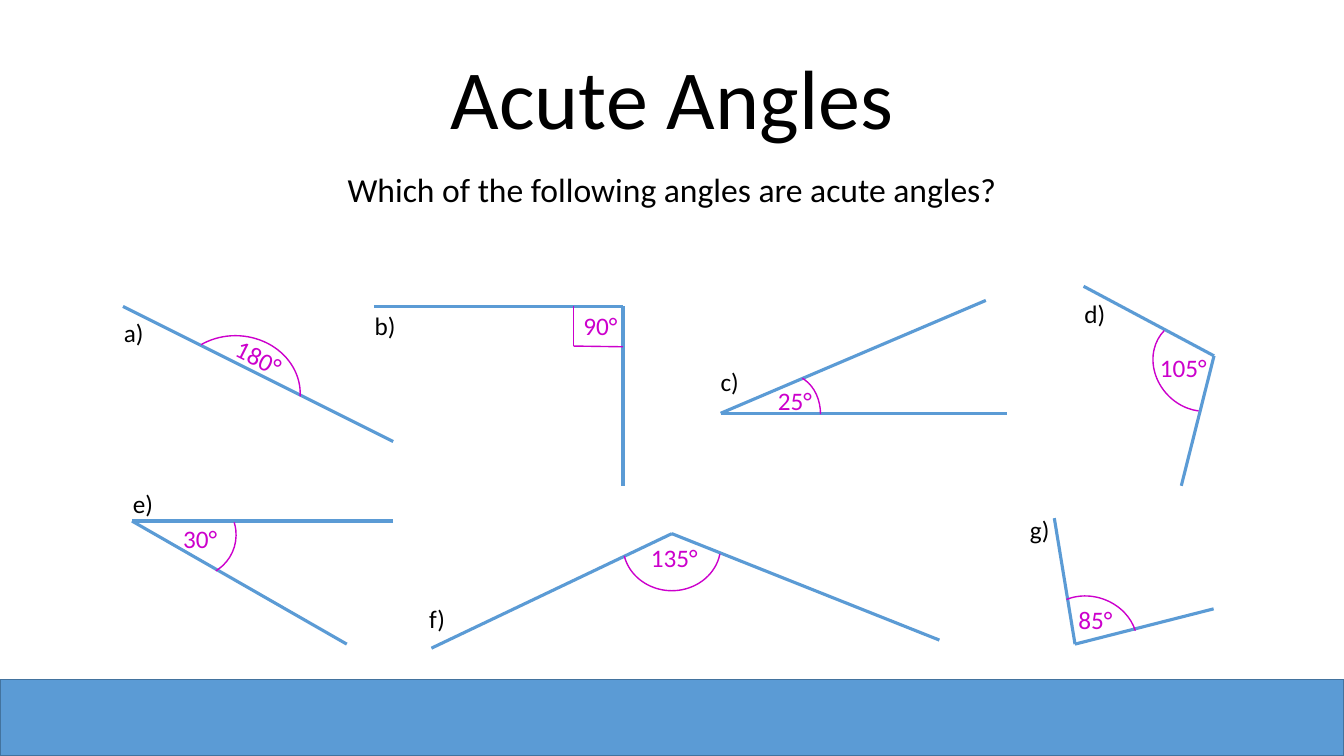
from dataclasses import dataclass

from lxml.etree import SubElement
from pptx import Presentation
from pptx.dml.color import RGBColor
from pptx.enum.shapes import MSO_CONNECTOR, MSO_SHAPE
from pptx.enum.text import MSO_ANCHOR, MSO_AUTO_SIZE, PP_ALIGN
from pptx.oxml.ns import qn
from pptx.util import Pt

BLACK, BLUE, DARK_BLUE, MAGENTA = "000000", "5B9BD5", "43739E", "CC00CC"


def colour(hex_string):
    return RGBColor.from_string(hex_string)


@dataclass
class AngleSlide:
    slide: object
    font: str = "Calibri"
    label_size: float = 18
    arm_width: float = 2.25
    mark_width: float = 1

    def set_text(self, frame, text, size, hex_string):
        frame.text = text
        frame.word_wrap = True
        paragraph = frame.paragraphs[0]
        for run in paragraph.runs:
            run.font.name = self.font
            run.font.size = Pt(size)
            run.font.color.rgb = colour(hex_string)
        return paragraph

    def heading(self, placeholder, text, box, size, anchor, space_before):
        placeholder.left, placeholder.top, placeholder.width, placeholder.height = map(Pt, box)
        frame = placeholder.text_frame
        paragraph = self.set_text(frame, text, size, BLACK)
        frame.auto_size = MSO_AUTO_SIZE.NONE
        frame.vertical_anchor = anchor
        paragraph.alignment = PP_ALIGN.CENTER
        paragraph.line_spacing = 0.9
        paragraph.space_before = Pt(space_before)
        properties = paragraph._p.get_or_add_pPr()
        properties.set("marL", "0")
        properties.set("indent", "0")
        SubElement(properties, qn("a:buNone"))

    def band(self, box):
        band = self.slide.shapes.add_shape(MSO_SHAPE.RECTANGLE, *map(Pt, box))
        band.shadow.inherit = False
        band.fill.solid()
        band.fill.fore_color.rgb = colour(BLUE)
        band.line.color.rgb = colour(DARK_BLUE)
        band.line.width = Pt(1)

    def label(self, text, position, width, hex_string, rotation=0):
        label = self.slide.shapes.add_textbox(*map(Pt, (*position, width, 29)))
        label.rotation = rotation
        self.set_text(label.text_frame, text, self.label_size, hex_string)
        label.text_frame.auto_size = MSO_AUTO_SIZE.SHAPE_TO_FIT_TEXT

    def lines(self, points, hex_string, width):
        for start, end in zip(points, points[1:]):
            line = self.slide.shapes.add_connector(
                MSO_CONNECTOR.STRAIGHT, *map(Pt, (*start, *end)))
            line.line.color.rgb = colour(hex_string)
            line.line.width = Pt(width)
            SubElement(line._element.spPr, qn("a:effectLst"))

    def arc(self, box, rotation, start, end):
        arc = self.slide.shapes.add_shape(MSO_SHAPE.ARC, *map(Pt, box))
        arc.shadow.inherit = False
        arc.rotation = rotation
        arc.adjustments[0], arc.adjustments[1] = start, end
        arc.fill.background()
        arc.line.color.rgb = colour(MAGENTA)
        arc.line.width = Pt(self.mark_width)

    def angle(self, letter, letter_at, arms, measure, measure_at, arc=None, tilt=0):
        self.lines(arms, BLUE, self.arm_width)
        self.label(measure, measure_at, 100, MAGENTA, tilt)
        if arc:
            self.arc(*arc)
        self.label(letter, letter_at, 42.5, BLACK)


ANGLES = [
    ("a)", (81.4, 223.2), [(280.8, 315.4), (87.8, 218.9)],
     "180°", (158.4, 252.7), ((123.1, 239.8, 91.4, 81.4), 3.2, 138.32, 0), 26.6),
    ("b)", (260.6, 218.2), [(267.1, 218.7), (445, 218.7), (445, 347)],
     "90°", (409.7, 218.2)),
    ("c)", (507.6, 257.8), [(704.2, 214.6), (514.8, 295.2), (719.3, 295.2)],
     "25°", (548.6, 271.4), ((542.2, 267.8, 43.9, 56.2), 0, 173.51, 0)),
    ("d)", (767.5, 209.5), [(774, 204.5), (867.2, 254.2), (843.8, 347)],
     "105°", (821.5, 248.4), ((821.5, 229.7, 69.8, 61.9), 226.9, 134.16, 214.62)),
    ("e)", (87.8, 344.9), [(280.8, 372.2), (94.3, 372.2), (247.7, 460.1)],
     "30°", (123.8, 370.1), ((105.8, 349.2, 61.9, 64.1), 114.1, 138.59, 181.57)),
    ("f)", (299.5, 427.7), [(308.2, 463), (479.9, 381.2), (671, 457.2)],
     "135°", (457.9, 383.8), ((445, 357.8, 69.8, 64.1), 180, 113.88, 208.76)),
    ("g)", (728.6, 363.6), [(753.1, 370.1), (767.9, 460.1), (866.9, 434.9)],
     "85°", (763.2, 428.4), ((743, 426.2, 69.8, 61.2), 19.2, 132.81, 198.02)),
]
RIGHT_ANGLE_MARK = [(409.7, 218.9), (409.7, 247.2), (445, 247.7)]


def main():
    presentation = Presentation()
    presentation.slide_width, presentation.slide_height = Pt(960), Pt(540)
    slide = presentation.slides.add_slide(presentation.slide_layouts[1])
    page = AngleSlide(slide)
    page.band((0, 485.5, 960, 54.5))
    title, question = slide.placeholders
    page.heading(title, "Acute Angles", (66, 5, 828, 104.4), 60, MSO_ANCHOR.BOTTOM, 0)
    page.heading(question, "Which of the following angles are acute angles?",
                 (66, 120.2, 828, 342.7), 24, MSO_ANCHOR.TOP, 10)
    for angle in ANGLES:
        page.angle(*angle)
    page.lines(RIGHT_ANGLE_MARK, MAGENTA, page.mark_width)
    presentation.save("out.pptx")


if __name__ == "__main__":
    main()
